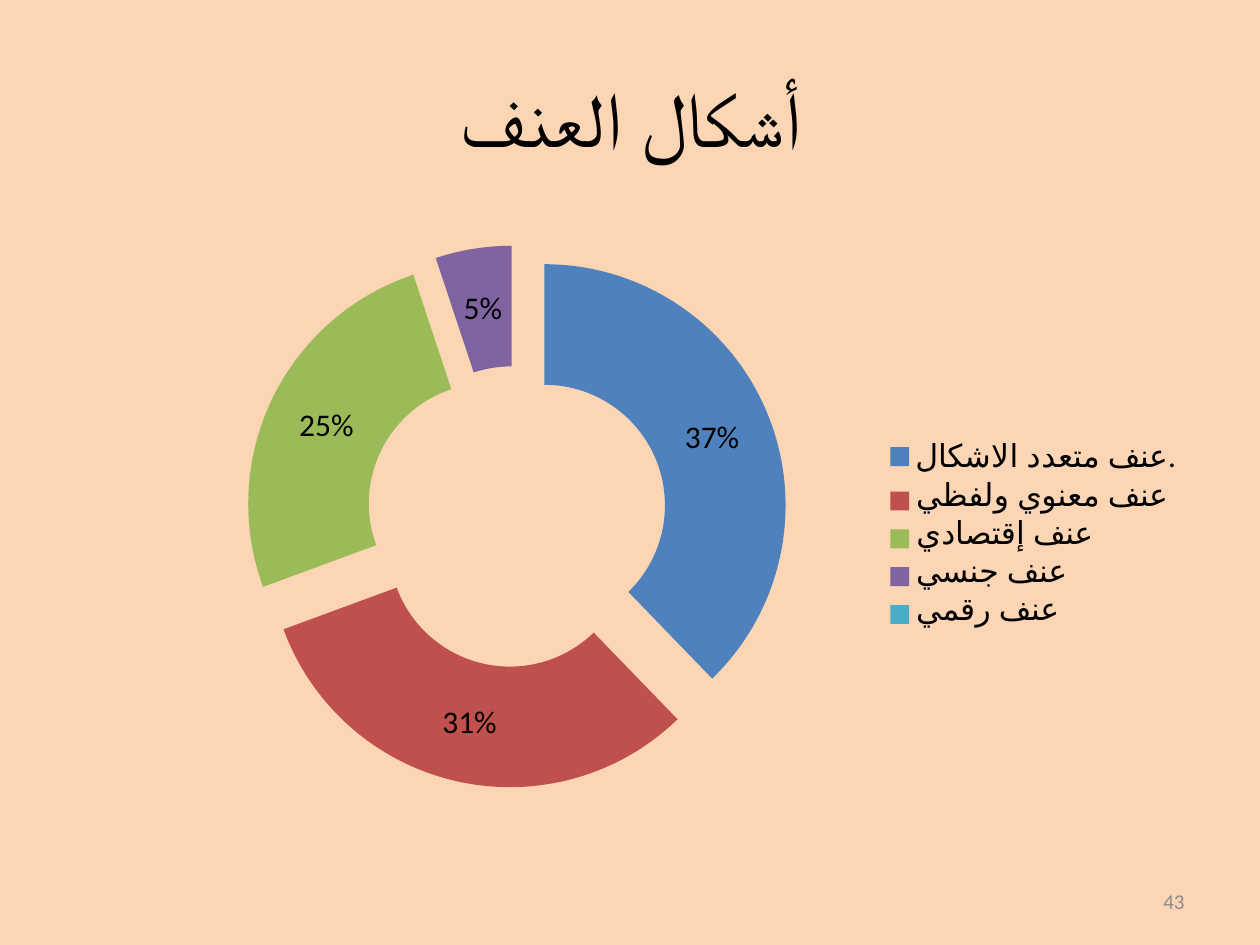
from dataclasses import dataclass
from typing import Optional

from lxml.etree import SubElement
from pptx import Presentation
from pptx.chart.data import CategoryChartData
from pptx.dml.color import RGBColor
from pptx.enum.chart import XL_CHART_TYPE, XL_LEGEND_POSITION
from pptx.enum.text import MSO_ANCHOR, PP_ALIGN
from pptx.oxml.ns import qn
from pptx.util import Inches, Pt


@dataclass(frozen=True)
class Theme:
    font: str = "Calibri"
    background: str = "FCD5B5"
    text: str = "000000"
    muted: str = "8C8C8C"
    title_size: int = 44
    chart_size: int = 18
    number_size: int = 12


@dataclass(frozen=True)
class Slice:
    label: str
    percent: Optional[int]
    color: str


@dataclass(frozen=True)
class Box:
    left: float
    top: float
    width: float
    height: float

    def lengths(self) -> tuple:
        return tuple(Inches(v) for v in (self.left, self.top, self.width, self.height))


THEME = Theme()
TITLE_BOX = Box(0.5, 0.3, 9, 1.25)
CHART_BOX = Box(0.5, 1.75, 9, 4.95)
NUMBER_BOX = Box(7.17, 6.95, 2.33, 0.4)
PLOT_AREA = Box(0.16, 0.04, 0.48, 0.87)  # fractions of the chart
SLICES = [
    Slice("عنف متعدد الاشكال.", 37, "4F81BD"),
    Slice("عنف معنوي ولفظي", 31, "C0504D"),
    Slice("عنف إقتصادي", 25, "9BBB59"),
    Slice("عنف جنسي", 5, "8064A2"),
    Slice("عنف رقمي", None, "4BACC6"),
]


def format_font(font, size: int, color: str) -> None:
    font.name = THEME.font
    font.size = Pt(size)
    font.color.rgb = RGBColor.from_string(color)


def write_text(shape, text: str, *, size: int, color: str, align: PP_ALIGN) -> None:
    frame = shape.text_frame
    frame.word_wrap = True
    frame.vertical_anchor = MSO_ANCHOR.MIDDLE
    paragraph = frame.paragraphs[0]
    paragraph.alignment = align
    run = paragraph.add_run()
    run.text = text
    format_font(run.font, size, color)


def place_plot_area(chart, area: Box) -> None:
    """Fix the inner plot area at the given fractions of the chart."""
    plot_area = chart._chartSpace.find(".//" + qn("c:plotArea"))
    for old_layout in plot_area.findall(qn("c:layout")):
        plot_area.remove(old_layout)
    layout = SubElement(plot_area, qn("c:layout"))
    plot_area.insert(0, layout)
    manual = SubElement(layout, qn("c:manualLayout"))
    settings = {
        "layoutTarget": "inner", "xMode": "edge", "yMode": "edge",
        "x": area.left, "y": area.top, "w": area.width, "h": area.height,
    }
    for name, value in settings.items():
        SubElement(manual, qn(f"c:{name}")).set("val", str(value))


def add_doughnut(slide, slices: list[Slice], box: Box) -> None:
    data = CategoryChartData()
    data.categories = [item.label for item in slices]
    data.add_series("Series 1", [item.percent for item in slices])
    chart = slide.shapes.add_chart(
        XL_CHART_TYPE.DOUGHNUT_EXPLODED, *box.lengths(), data
    ).chart
    chart.has_title = False
    format_font(chart.font, THEME.chart_size, THEME.text)
    chart.has_legend = True
    chart.legend.position = XL_LEGEND_POSITION.RIGHT
    chart.legend.include_in_layout = False

    plot = chart.plots[0]
    plot.vary_by_categories = True
    plot.has_data_labels = True
    labels = plot.data_labels
    labels.show_value = True
    labels.show_percentage = False
    labels.number_format = '0"%"'
    labels.number_format_is_linked = False
    format_font(labels.font, THEME.chart_size, THEME.text)
    for index, item in enumerate(slices):
        fill = plot.series[0].points[index].format.fill
        fill.solid()
        fill.fore_color.rgb = RGBColor.from_string(item.color)
    # Points carry their own explosion, so each slice is offset explicitly.
    for point in chart._chartSpace.iter(qn("c:dPt")):
        if point.find(qn("c:explosion")) is None:
            explosion = SubElement(point, qn("c:explosion"))
            explosion.set("val", "25")
            point.find(qn("c:spPr")).addprevious(explosion)
    place_plot_area(chart, PLOT_AREA)


def main() -> None:
    presentation = Presentation()
    presentation.slide_width = Inches(10)
    presentation.slide_height = Inches(7.5)
    slide = presentation.slides.add_slide(presentation.slide_layouts[5])
    background = slide.background.fill
    background.solid()
    background.fore_color.rgb = RGBColor.from_string(THEME.background)

    title = slide.shapes.title
    title.left, title.top, title.width, title.height = TITLE_BOX.lengths()
    write_text(title, "أشكال العنف", size=THEME.title_size, color=THEME.text,
               align=PP_ALIGN.CENTER)
    add_doughnut(slide, SLICES, CHART_BOX)
    number = slide.shapes.add_textbox(*NUMBER_BOX.lengths())
    write_text(number, "43", size=THEME.number_size, color=THEME.muted,
               align=PP_ALIGN.RIGHT)
    presentation.save("out.pptx")


if __name__ == "__main__":
    main()
